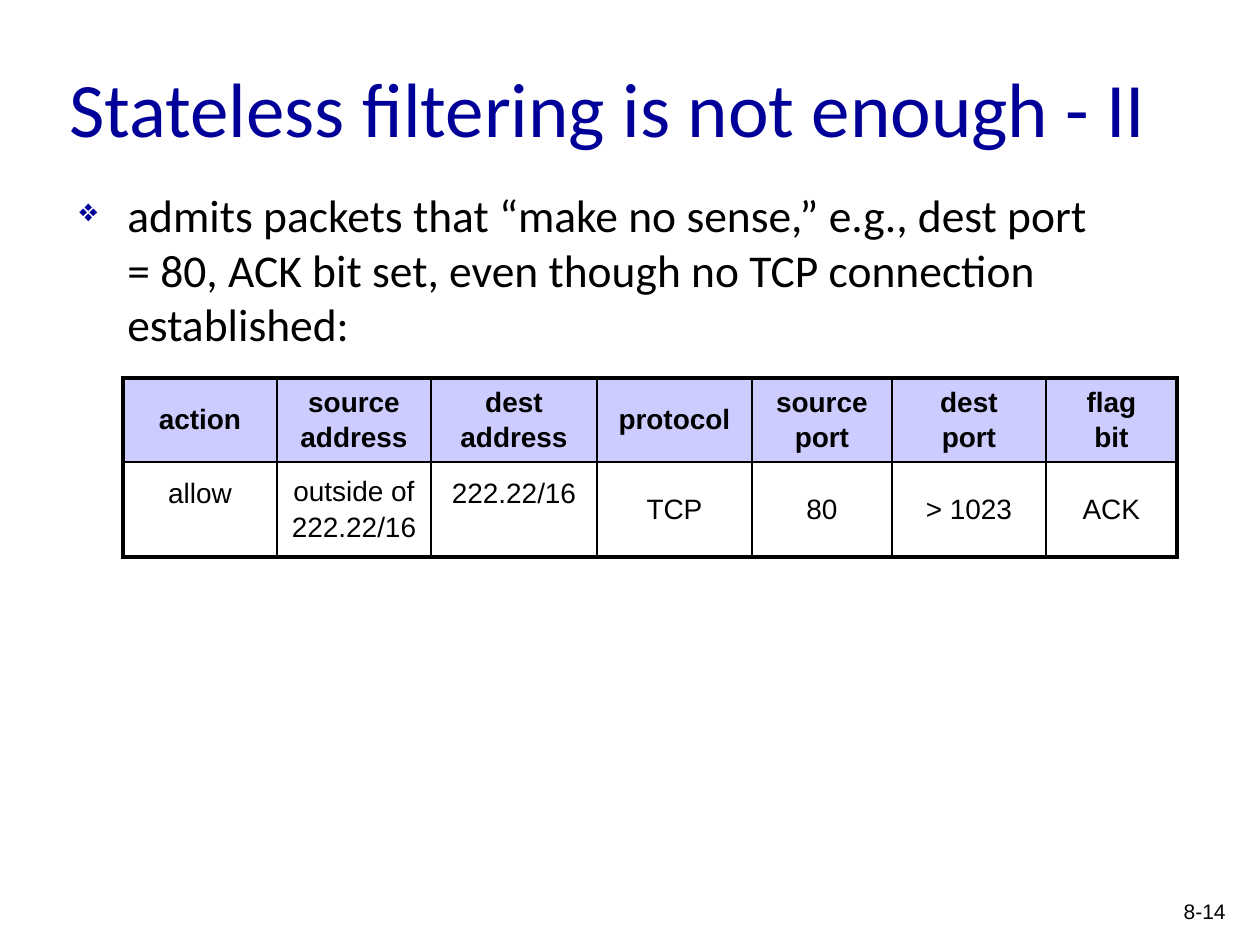
"""Build a slide on the limits of stateless packet filtering."""
from dataclasses import dataclass

import pptx
import pptx.dml.color
import pptx.enum.text
import pptx.oxml
import pptx.oxml.ns
import pptx.util

RGBColor = pptx.dml.color.RGBColor
PP_ALIGN = pptx.enum.text.PP_ALIGN
MSO_ANCHOR = pptx.enum.text.MSO_ANCHOR

NAVY = RGBColor(0x00, 0x00, 0x99)
BLACK = RGBColor(0x00, 0x00, 0x00)
LILAC = RGBColor(0xCC, 0xCC, 0xFF)

PX_PER_INCH = 126
THIN, THICK = 1, 2.25
ROW_HEIGHTS = (80, 95)
RAISED_MARGIN = 38


@dataclass(frozen=True)
class TextBlock:
    text: str
    left: int
    top: int
    width: int
    height: int
    size: int
    font: str
    color: RGBColor = BLACK
    align: PP_ALIGN = PP_ALIGN.LEFT
    anchor: MSO_ANCHOR = MSO_ANCHOR.TOP
    bullet: str = ""


@dataclass(frozen=True)
class Column:
    header: str
    value: str
    width: int
    raised: bool = False


BLOCKS = (
    TextBlock("8-14", 1145, 892, 93, 42, 12, "Arial", align=PP_ALIGN.RIGHT),
    TextBlock("Stateless filtering is not enough - II", 57, 28, 1172, 157, 44, "Calibri",
              NAVY, anchor=MSO_ANCHOR.MIDDLE),
    TextBlock("admits packets that “make no sense,” e.g., dest port = 80, ACK bit set, "
              "even though no TCP connection established:",
              67, 181, 1036, 632, 26, "Calibri", bullet="❖"),
)

COLUMNS = (
    Column("action", "allow", 154, raised=True),
    Column("source\naddress", "outside of\n222.22/16", 154),
    Column("dest\naddress", "222.22/16", 166, raised=True),
    Column("protocol", "TCP", 155),
    Column("source\nport", "80", 140),
    Column("dest\nport", "> 1023", 154),
    Column("flag\nbit", "ACK", 131),
)


def px(n: int) -> int:
    return pptx.util.Emu(round(n * 914400 / PX_PER_INCH))


def add_xml(parent, xml: str) -> None:
    ns = pptx.oxml.ns.nsdecls("a")
    parent.append(pptx.oxml.parse_xml(xml.replace(" ", f" {ns} ", 1)))


def format_text(tf, size: int, font: str, color: RGBColor, align, bold: bool = False) -> None:
    for i, p in enumerate(tf.paragraphs):
        p.alignment = align
        if i:
            p.space_before = pptx.util.Pt(2.5)
        for r in p.runs:
            r.font.size = pptx.util.Pt(size)
            r.font.name = font
            r.font.bold = bold
            r.font.color.rgb = color


def add_bullet(p, char: str) -> None:
    pPr = p._p.get_or_add_pPr()
    pPr.set("marL", str(px(48)))
    pPr.set("indent", str(-px(48)))
    add_xml(pPr, f'<a:buClr ><a:srgbClr val="{NAVY}"/></a:buClr>')
    add_xml(pPr, '<a:buSzPct val="70000"/>')
    add_xml(pPr, f'<a:buChar char="{char}"/>')


def add_text(s, block: TextBlock) -> None:
    sp = s.shapes.add_textbox(px(block.left), px(block.top), px(block.width), px(block.height))
    tf = sp.text_frame
    tf.word_wrap = True
    tf.vertical_anchor = block.anchor
    tf.text = block.text
    format_text(tf, block.size, block.font, block.color, block.align)
    if block.bullet:
        add_bullet(tf.paragraphs[0], block.bullet)


def add_borders(cell, widths: dict[str, float]) -> None:
    tcPr = cell._tc.get_or_add_tcPr()
    for side, width in widths.items():
        add_xml(tcPr, f'<a:ln{side} w="{int(pptx.util.Pt(width))}"><a:solidFill>'
                      f'<a:srgbClr val="{BLACK}"/></a:solidFill></a:ln{side}>')


def add_rule_table(s, left: int, top: int) -> None:
    width = sum(col.width for col in COLUMNS)
    table = s.shapes.add_table(len(ROW_HEIGHTS), len(COLUMNS), px(left), px(top),
                               px(width), px(sum(ROW_HEIGHTS))).table
    table.first_row = table.horz_banding = False
    for row, height in zip(table.rows, ROW_HEIGHTS):
        row.height = px(height)
    for c, col in enumerate(COLUMNS):
        table.columns[c].width = px(col.width)
        for r, text in enumerate((col.header, col.value)):
            is_header = r == 0
            cell = table.cell(r, c)
            cell.text_frame.text = text
            cell.vertical_anchor = MSO_ANCHOR.MIDDLE
            format_text(cell.text_frame, 16, "Arial", BLACK, PP_ALIGN.CENTER, is_header)
            if col.raised and not is_header:
                cell.margin_bottom = px(RAISED_MARGIN)
            add_borders(cell, {
                "L": THICK if c == 0 else THIN,
                "R": THICK if c == len(COLUMNS) - 1 else THIN,
                "T": THICK if is_header else THIN,
                "B": THIN if is_header else THICK,
            })
            if is_header:
                cell.fill.solid()
                cell.fill.fore_color.rgb = LILAC
            else:
                cell.fill.background()


def main() -> None:
    prs = pptx.Presentation()
    prs.slide_width, prs.slide_height = px(1260), px(945)
    s = prs.slides.add_slide(prs.slide_layouts[6])
    for block in BLOCKS:
        add_text(s, block)
    add_rule_table(s, 123, 378)
    prs.save("out.pptx")


if __name__ == "__main__":
    main()
